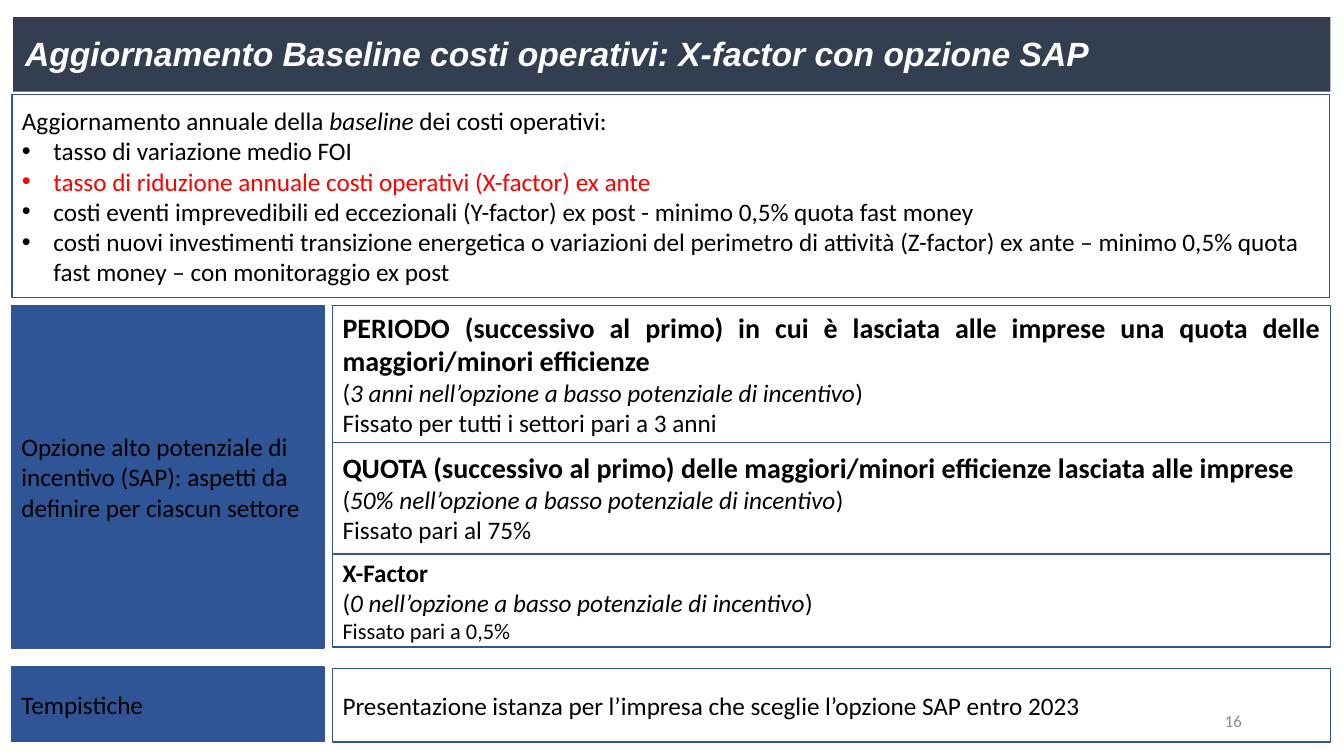
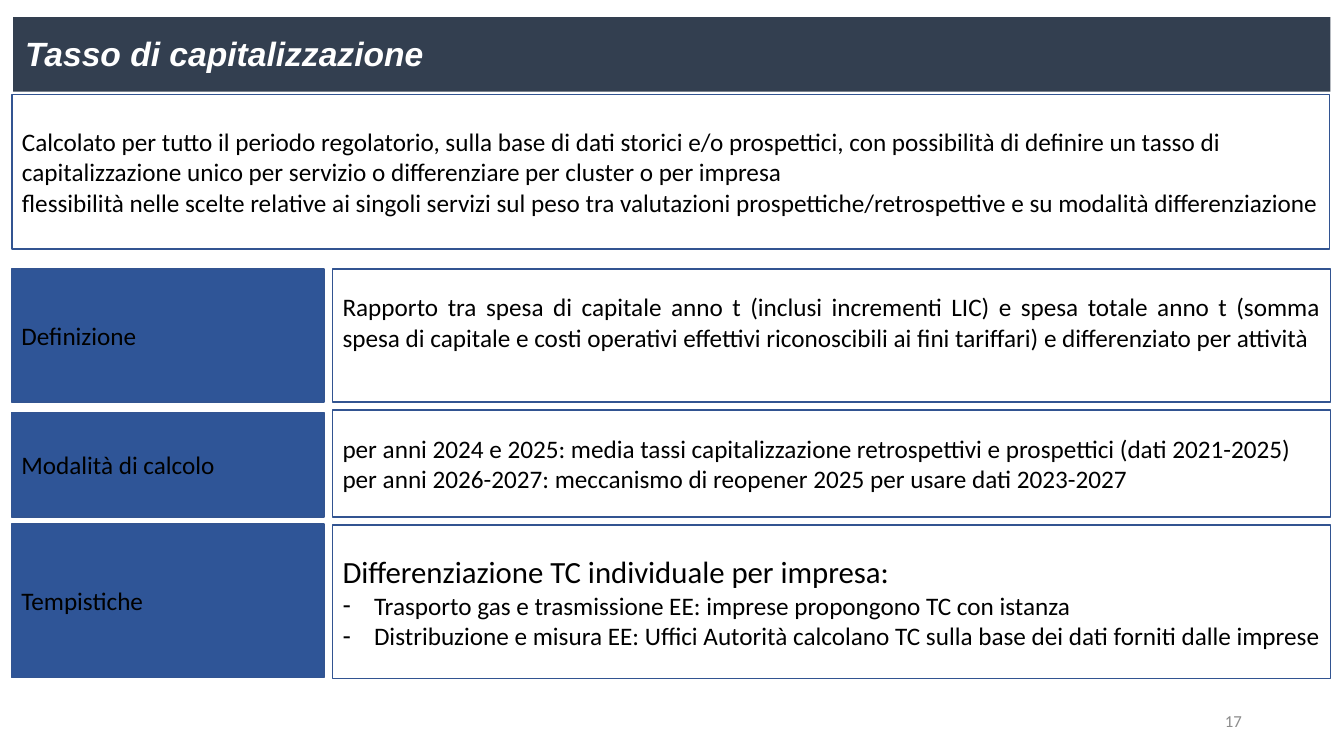
import pptx
import pptx.util
import pptx.dml.color
import pptx.enum.shapes
import pptx.enum.text
import pptx.oxml.ns
import lxml.etree

Pt = pptx.util.Pt
ALIGN = pptx.enum.text.PP_ALIGN
ANCHOR = pptx.enum.text.MSO_ANCHOR

# Theme: colours, text styles and kinds of box
THEME = {
    "colours": {"band": "333F50", "label": "2F5597", "border": "325491",
                "text": "000000", "alert": "FF0000", "white": "FFFFFF", "number": "8C8C8C"},
    "text": {
        "title": {"name": "Arial", "size": 24, "bold": True, "italic": True, "colour": "white"},
        "body": {"size": 18},
        "strong": {"size": 18, "bold": True},
        "head": {"size": 20, "bold": True},
        "lead": {"size": 22},
        "small": {"size": 16},
        "number": {"size": 12, "colour": "number"},
        "bullet": {"size": 18, "mark": "•"},
        "alert": {"size": 18, "mark": "•", "colour": "alert"},
        "dash": {"size": 18, "mark": "-"},
    },
    "boxes": {
        "title": {"left": 9.4, "width": 941, "fill": "band", "anchor": ANCHOR.TOP,
                  "insets": (8.6, 11.5, 7.2, 0)},
        "intro": {"left": 8.6, "width": 941, "line": "border"},
        "label": {"left": 8.2, "width": 223.2, "fill": "label", "line": "border"},
        "detail": {"left": 237.6, "width": 712.8, "line": "border", "align": ALIGN.JUSTIFY},
        "raised": {"left": 237.6, "width": 712.8, "line": "border", "align": ALIGN.JUSTIFY,
                   "insets": (7.2, 3.6, 7.2, 23)},
        "number": {"left": 678.2, "width": 216, "align": ALIGN.RIGHT},
    },
}
HANGING = Pt(22.5)


def theme_colour(name):
    return pptx.dml.color.RGBColor.from_string(THEME["colours"][name])


def add_box(page, kind, top, height, paragraphs):
    """Add a box; asterisks in a text switch italics on and off."""
    look = THEME["boxes"][kind]
    place = [Pt(value) for value in (look["left"], top, look["width"], height)]
    if kind == "number":
        box = page.shapes.add_textbox(*place)
    else:
        box = page.shapes.add_shape(pptx.enum.shapes.MSO_SHAPE.RECTANGLE, *place)
        box.shadow.inherit = False
        for part, name in ((box.fill, look.get("fill")), (box.line.fill, look.get("line"))):
            if name:
                part.solid()
                part.fore_color.rgb = theme_colour(name)
            else:
                part.background()
        if "line" in look:
            box.line.width = Pt(1)

    frame = box.text_frame
    frame.word_wrap = True
    frame.vertical_anchor = look.get("anchor", ANCHOR.MIDDLE)
    insets = look.get("insets", (7.2, 3.6, 7.2, 3.6))
    for side, inset in zip(("left", "top", "right", "bottom"), insets):
        setattr(frame, f"margin_{side}", Pt(inset))

    for index, (style, text) in enumerate(paragraphs):
        para = frame.add_paragraph() if index else frame.paragraphs[0]
        para.alignment = look.get("align", ALIGN.LEFT)
        format_values = THEME["text"][style]
        if "mark" in format_values:
            properties = para._p.get_or_add_pPr()
            properties.set("marL", str(HANGING))
            properties.set("indent", str(-HANGING))
            for tag, key, value in (("a:buFont", "typeface", "Arial"),
                                    ("a:buChar", "char", format_values["mark"])):
                lxml.etree.SubElement(properties, pptx.oxml.ns.qn(tag)).set(key, value)
        for order, piece in enumerate(text.split("*")):
            span = para.add_run()
            span.text = piece
            font_values = {
                "name": format_values.get("name", "Calibri"),
                "size": Pt(format_values["size"]),
                "bold": format_values.get("bold", False),
                "italic": format_values.get("italic", order % 2 == 1),
            }
            for attribute, value in font_values.items():
                setattr(span.font, attribute, value)
            span.font.color.rgb = theme_colour(format_values.get("colour", "text"))


# Content: number, title and boxes (kind, top, height, paragraphs)
PAGES = [
    (16, "Aggiornamento Baseline costi operativi: X-factor con opzione SAP", [
        ("intro", 67.7, 144.7, [
            ("body", "Aggiornamento annuale della *baseline* dei costi operativi:"),
            ("bullet", "tasso di variazione medio FOI"),
            ("alert", "tasso di riduzione annuale costi operativi (X-factor) ex ante"),
            ("bullet", "costi eventi imprevedibili ed eccezionali (Y-factor) ex post - "
                       "minimo 0,5% quota fast money"),
            ("bullet", "costi nuovi investimenti transizione energetica o variazioni del perimetro "
                       "di attività (Z-factor) ex ante – minimo 0,5% quota fast money – con "
                       "monitoraggio ex post"),
        ]),
        ("label", 218.2, 244.8, [
            ("body", "Opzione alto potenziale di incentivo (SAP): aspetti da definire per "
                     "ciascun settore"),
        ]),
        ("detail", 218.2, 97.9, [
            ("head", "PERIODO (successivo al primo) in cui è lasciata alle imprese una quota "
                     "delle maggiori/minori efficienze"),
            ("body", "(*3 anni nell’opzione a basso potenziale di incentivo*)"),
            ("body", "Fissato per tutti i settori pari a 3 anni"),
        ]),
        ("detail", 316.1, 79.2, [
            ("head", "QUOTA (successivo al primo) delle maggiori/minori efficienze lasciata "
                     "alle imprese"),
            ("body", "(*50% nell’opzione a basso potenziale di incentivo*)"),
            ("body", "Fissato pari al 75%"),
        ]),
        ("detail", 396, 66.2, [
            ("strong", "X-Factor"),
            ("body", "(*0 nell’opzione a basso potenziale di incentivo*)"),
            ("small", "Fissato pari a 0,5%"),
        ]),
        ("label", 476.6, 53.3, [("body", "Tempistiche")]),
        ("detail", 477.4, 52.6, [
            ("body", "Presentazione istanza per l’impresa che sceglie l’opzione SAP entro 2023"),
        ]),
    ]),
    (17, "Tasso di capitalizzazione", [
        ("intro", 67.7, 110.2, [
            ("body", "Calcolato per tutto il periodo regolatorio, sulla base di dati storici e/o "
                     "prospettici, con possibilità di definire un tasso di capitalizzazione unico "
                     "per servizio o differenziare per cluster o per impresa"),
            ("body", "flessibilità nelle scelte relative ai singoli servizi sul peso tra "
                     "valutazioni prospettiche/retrospettive e su modalità differenziazione"),
        ]),
        ("label", 192.2, 95, [("body", "Definizione")]),
        ("raised", 192.2, 95, [
            ("body", "Rapporto tra spesa di capitale anno t (inclusi incrementi LIC) e spesa "
                     "totale anno t (somma spesa di capitale e costi operativi effettivi "
                     "riconoscibili ai fini tariffari) e differenziato per attività"),
        ]),
        ("label", 294.5, 74.9, [("body", "Modalità di calcolo")]),
        ("detail", 293, 76.3, [
            ("body", "per anni 2024 e 2025: media tassi capitalizzazione retrospettivi e "
                     "prospettici (dati 2021-2025)"),
            ("body", "per anni 2026-2027: meccanismo di reopener 2025 per usare dati 2023-2027"),
        ]),
        ("label", 374.4, 109.4, [("body", "Tempistiche")]),
        ("detail", 375.1, 109.4, [
            ("lead", "Differenziazione TC individuale per impresa:"),
            ("dash", "Trasporto gas e trasmissione EE: imprese propongono TC con istanza"),
            ("dash", "Distribuzione e misura EE: Uffici Autorità calcolano TC sulla base dei "
                     "dati forniti dalle imprese"),
        ]),
    ]),
]

# Build the deck
deck = pptx.Presentation()
deck.slide_width, deck.slide_height = Pt(960), Pt(540)
for number, title, boxes in PAGES:
    page = deck.slides.add_slide(deck.slide_layouts[6])
    add_box(page, "number", 500.4, 28.8, [("number", str(number))])
    add_box(page, "title", 12.2, 53.3, [("title", title)])
    for kind, top, height, paragraphs in boxes:
        add_box(page, kind, top, height, paragraphs)
deck.save("out.pptx")
